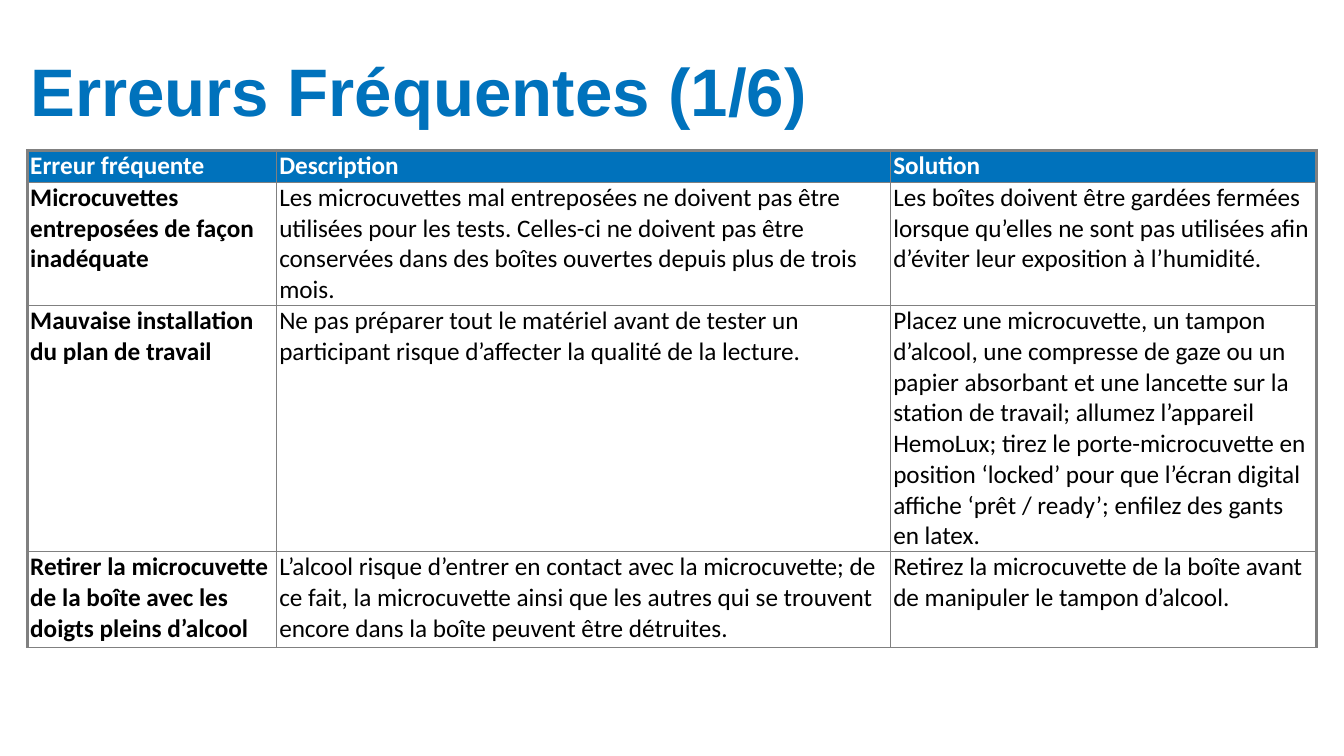
from lxml.etree import SubElement
from pptx import Presentation
from pptx.dml.color import RGBColor
from pptx.enum.text import MSO_ANCHOR, MSO_AUTO_SIZE, PP_ALIGN
from pptx.oxml.ns import qn
from pptx.util import Inches, Pt

BLUE = RGBColor(0x00, 0x72, 0xBC)
WHITE = RGBColor(0xFF, 0xFF, 0xFF)
BLACK = RGBColor(0x00, 0x00, 0x00)
GREY = RGBColor(0x80, 0x80, 0x80)

SLIDE_WIDTH, SLIDE_HEIGHT = Inches(13.33), Inches(7.5)
COLUMNS = [Inches(width) for width in (2.47, 6.09, 4.23)]
ROWS = [Inches(height) for height in (0.32, 1.17, 2.34, 0.95)]
THICK, THIN = Pt(2.25), Pt(1)

ERRORS = [
    ("Erreur fréquente", "Description", "Solution"),
    (
        "Microcuvettes entreposées de façon inadéquate",
        "Les microcuvettes mal entreposées ne doivent pas être utilisées pour les "
        "tests. Celles-ci ne doivent pas être conservées dans des boîtes ouvertes "
        "depuis plus de trois mois.",
        "Les boîtes doivent être gardées fermées lorsque qu’elles ne sont pas "
        "utilisées afin d’éviter leur exposition à l’humidité.",
    ),
    (
        "Mauvaise installation du plan de travail",
        "Ne pas préparer tout le matériel avant de tester un participant risque "
        "d’affecter la qualité de la lecture.",
        "Placez une microcuvette, un tampon d’alcool, une compresse de gaze ou un "
        "papier absorbant et une lancette sur la station de travail; allumez "
        "l’appareil HemoLux; tirez le porte-microcuvette en position ‘locked’ pour "
        "que l’écran digital affiche ‘prêt / ready’; enfilez des gants en latex.",
    ),
    (
        "Retirer la microcuvette de la boîte avec les doigts pleins d’alcool",
        "L’alcool risque d’entrer en contact avec la microcuvette; de ce fait, la "
        "microcuvette ainsi que les autres qui se trouvent encore dans la boîte "
        "peuvent être détruites.",
        "Retirez la microcuvette de la boîte avant de manipuler le tampon d’alcool.",
    ),
]


def write_text(frame, text, size, font, color, bold=False, spacing=1.0):
    """Write one left-aligned formatted paragraph into a text frame."""
    para = frame.paragraphs[0]
    para.alignment = PP_ALIGN.LEFT
    para.line_spacing = spacing
    span = para.add_run()
    span.text = text
    span.font.size = Pt(size)
    span.font.name = font
    span.font.bold = bold
    span.font.color.rgb = color


def set_borders(cell, left, right, top, bottom):
    """Draw the four grey borders of a cell at the given widths."""
    properties = cell._tc.get_or_add_tcPr()
    for side, width in zip("LRTB", (left, right, top, bottom)):
        line = SubElement(properties, qn(f"a:ln{side}"), w=str(width))
        fill = SubElement(line, qn("a:solidFill"))
        SubElement(fill, qn("a:srgbClr"), val=str(GREY))


def add_title(page, text):
    """Place and format the title placeholder."""
    title = page.shapes.title
    title.left, title.top = Inches(0.3), Inches(0.3)
    title.width, title.height = SLIDE_WIDTH - 2 * title.left, Inches(1)
    frame = title.text_frame
    frame.auto_size = MSO_AUTO_SIZE.NONE
    frame.word_wrap = True
    frame.vertical_anchor = MSO_ANCHOR.BOTTOM
    frame.margin_left = frame.margin_right = frame.margin_top = frame.margin_bottom = 0
    write_text(frame, text, size=48, font="Arial", color=BLUE, bold=True, spacing=0.9)


def format_cell(cell, text, row, column):
    """Fill one cell, with a blue header row and a bold first column."""
    header, first = row == 0, column == 0
    last = column == len(COLUMNS) - 1
    cell.margin_left = cell.margin_right = Inches(0.03)
    cell.margin_top = cell.margin_bottom = 0
    set_borders(
        cell,
        left=THICK if first else THIN,
        right=THICK if last else THIN,
        top=THICK if header else THIN,
        bottom=THIN,
    )
    if header:
        cell.fill.solid()
        cell.fill.fore_color.rgb = BLUE
    else:
        cell.fill.background()
    write_text(cell.text_frame, text, size=18, font="Calibri",
               color=WHITE if header else BLACK, bold=header or first)


def add_error_table(page, errors):
    """Add the table of frequent errors."""
    table = page.shapes.add_table(
        len(ROWS), len(COLUMNS), Inches(0.27), Inches(1.49), sum(COLUMNS), sum(ROWS)
    ).table
    table.first_row = table.horz_banding = False
    for column, width in zip(table.columns, COLUMNS):
        column.width = width
    for row, height in zip(table.rows, ROWS):
        row.height = height
    for row, texts in enumerate(errors):
        for column, text in enumerate(texts):
            format_cell(table.cell(row, column), text, row, column)


def main():
    """Build the slide and save the deck."""
    deck = Presentation()
    deck.slide_width, deck.slide_height = SLIDE_WIDTH, SLIDE_HEIGHT
    page = deck.slides.add_slide(deck.slide_layouts[5])
    add_title(page, "Erreurs Fréquentes (1/6)")
    add_error_table(page, ERRORS)
    deck.save("out.pptx")


if __name__ == "__main__":
    main()
